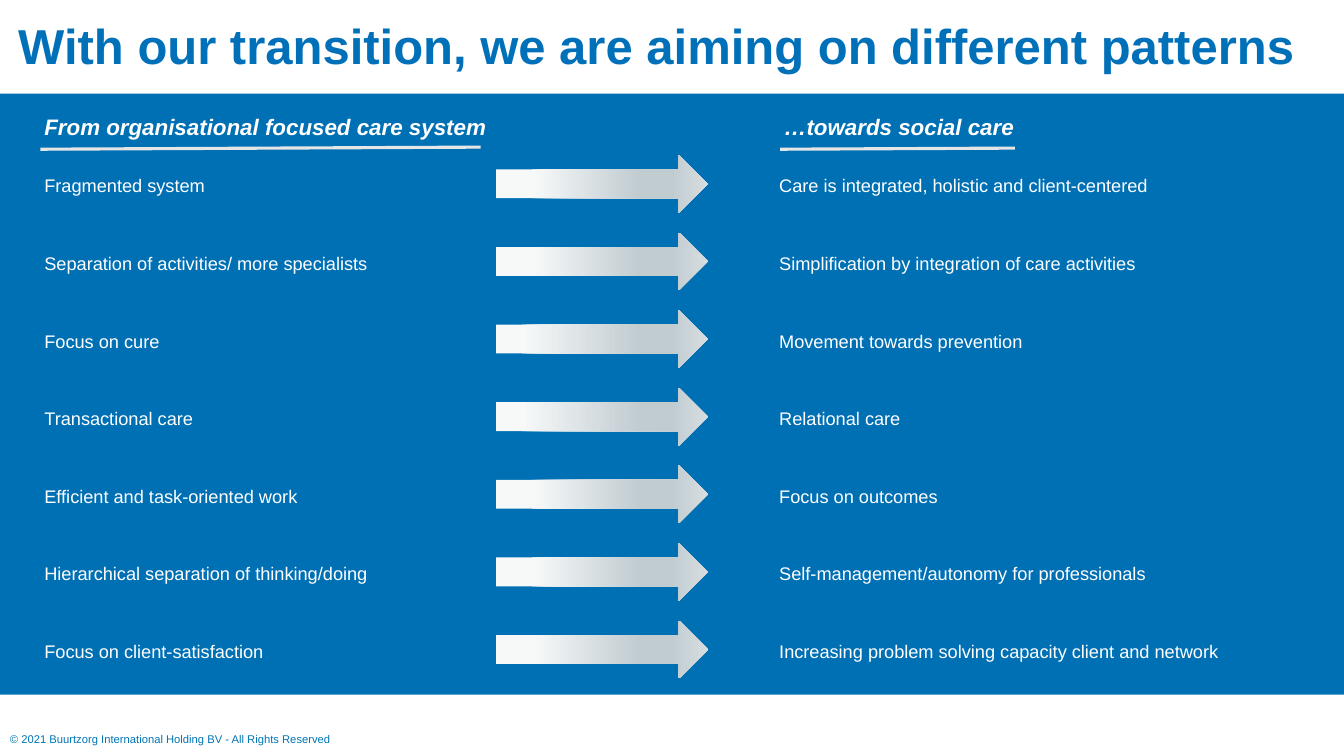
"""Build the slide that sets old care patterns against new ones."""
from dataclasses import dataclass

from lxml.etree import SubElement
from pptx import Presentation
from pptx.dml.color import RGBColor
from pptx.enum.shapes import MSO_CONNECTOR as Link, MSO_SHAPE as Shape
from pptx.enum.text import MSO_ANCHOR as Anchor, MSO_AUTO_SIZE as Fit, PP_ALIGN as Align
from pptx.oxml.ns import qn
from pptx.util import Pt

WHITE = "FFFFFF"
TOP, STEP = 104.4, 55.44
LEFT, RIGHT = 28.8, 553.7


@dataclass
class Row:
    old: str
    new: str
    stop: int = 17


@dataclass
class Head:
    text: str
    left: float
    width: float
    start: tuple[float, float]
    end: tuple[float, float]


ROWS = [
    Row("Fragmented system", "Care is integrated, holistic and client-centered"),
    Row("Separation of activities/ more specialists",
        "Simplification by integration of care activities"),
    Row("Focus on cure", "Movement towards prevention", 12),
    Row("Transactional care", "Relational care", 12),
    Row("Efficient and task-oriented work", "Focus on outcomes"),
    Row("Hierarchical separation of thinking/doing",
        "Self-management/autonomy for professionals"),
    Row("Focus on client-satisfaction",
        "Increasing problem solving capacity client and network"),
]
HEADS = [
    Head("From organisational focused care system", LEFT, 376.6, (28.8, 106.6), (343.4, 105.1)),
    Head("…towards social care", 557.3, 253.4, (557.3, 106.6), (725, 105.8)),
]


def paint(color, value: str) -> None:
    color.rgb = RGBColor.from_string(value)


def write(frame, text: str, *, size: float = 13, color: str = WHITE, bold: bool = False,
          italic: bool = False, side: float = 2.9, anchor=Anchor.MIDDLE,
          space: float = 1.15) -> None:
    frame.word_wrap = True
    frame.auto_size = Fit.NONE
    frame.vertical_anchor = anchor
    frame.margin_left = frame.margin_right = Pt(side)
    frame.margin_top = frame.margin_bottom = Pt(7.2)
    para = frame.paragraphs[0]
    para.alignment = Align.LEFT
    para.line_spacing = space
    run = para.add_run()
    run.text = text
    font = run.font
    font.name, font.size, font.bold, font.italic = "Arial", Pt(size), bold, italic
    paint(font.color, color)


def label(slide, text: str, left: float, top: float, width: float, height: float,
          **style) -> None:
    box = slide.shapes.add_textbox(Pt(left), Pt(top), Pt(width), Pt(height))
    write(box.text_frame, text, **style)


def plain(slide, kind, left: float, top: float, width: float, height: float):
    shape = slide.shapes.add_shape(kind, Pt(left), Pt(top), Pt(width), Pt(height))
    shape.shadow.inherit = False
    shape.line.fill.background()
    return shape


def band(slide, top: float, height: float) -> None:
    shape = plain(slide, Shape.RECTANGLE, 0, top, 960, height)
    shape.fill.solid()
    paint(shape.fill.fore_color, WHITE)


def arrow(slide, top: float, stop: int) -> None:
    shape = plain(slide, Shape.RIGHT_ARROW, 354.4, top, 151.2, 41.2)
    shape.fill.gradient()
    shape.fill.gradient_angle = 0
    stops = shape.element.spPr.find(".//" + qn("a:gsLst"))
    for old in list(stops):
        stops.remove(old)
    for place, color in ((0, "F7F9F9"), (stop, "F7F9F9"), (68, "C1CCD1"),
                         (78, "C1CCD1"), (84, "C3CED3"), (100, "D6DDE0")):
        node = SubElement(stops, qn("a:gs"), pos=str(place * 1000))
        SubElement(node, qn("a:srgbClr"), val=color)


def header(slide, head: Head) -> None:
    label(slide, head.text, head.left, 72, head.width, 33.8, size=16, bold=True, italic=True)
    ends = [Pt(value) for value in (*head.start, *head.end)]
    rule = slide.shapes.add_connector(Link.STRAIGHT, *ends)
    rule.line.width = Pt(2.25)
    paint(rule.line.color, "E7E6E6")
    SubElement(rule.element.spPr, qn("a:effectLst"))


def main() -> None:
    deck = Presentation()
    deck.slide_width, deck.slide_height = Pt(960), Pt(540)
    slide = deck.slides.add_slide(deck.slide_layouts[5])
    slide.background.fill.solid()
    paint(slide.background.fill.fore_color, "0070B5")

    band(slide, 0, 67)
    band(slide, 496.1, 43.9)
    title = slide.shapes.title
    title.left, title.top, title.width, title.height = Pt(5.8), Pt(9.4), Pt(949), Pt(45.4)
    write(title.text_frame, "With our transition, we are aiming on different patterns",
          size=35, color="0070B9", bold=True, side=7.2, space=1)
    slide.shapes.element.append(title.element)

    for head in HEADS:
        header(slide, head)
    for place, row in enumerate(ROWS):
        top = TOP + place * STEP
        label(slide, row.old, LEFT, top, 320, 54)
        arrow(slide, top + 6.3, row.stop)
        label(slide, row.new, RIGHT, top, 381, 54)

    label(slide, "© 2021 Buurtzorg International Holding BV - All Rights Reserved",
          0, 506.9, 277.2, 33.1, size=8, color="0075B4", side=7.2,
          anchor=Anchor.BOTTOM, space=1)
    deck.save("out.pptx")


if __name__ == "__main__":
    main()
